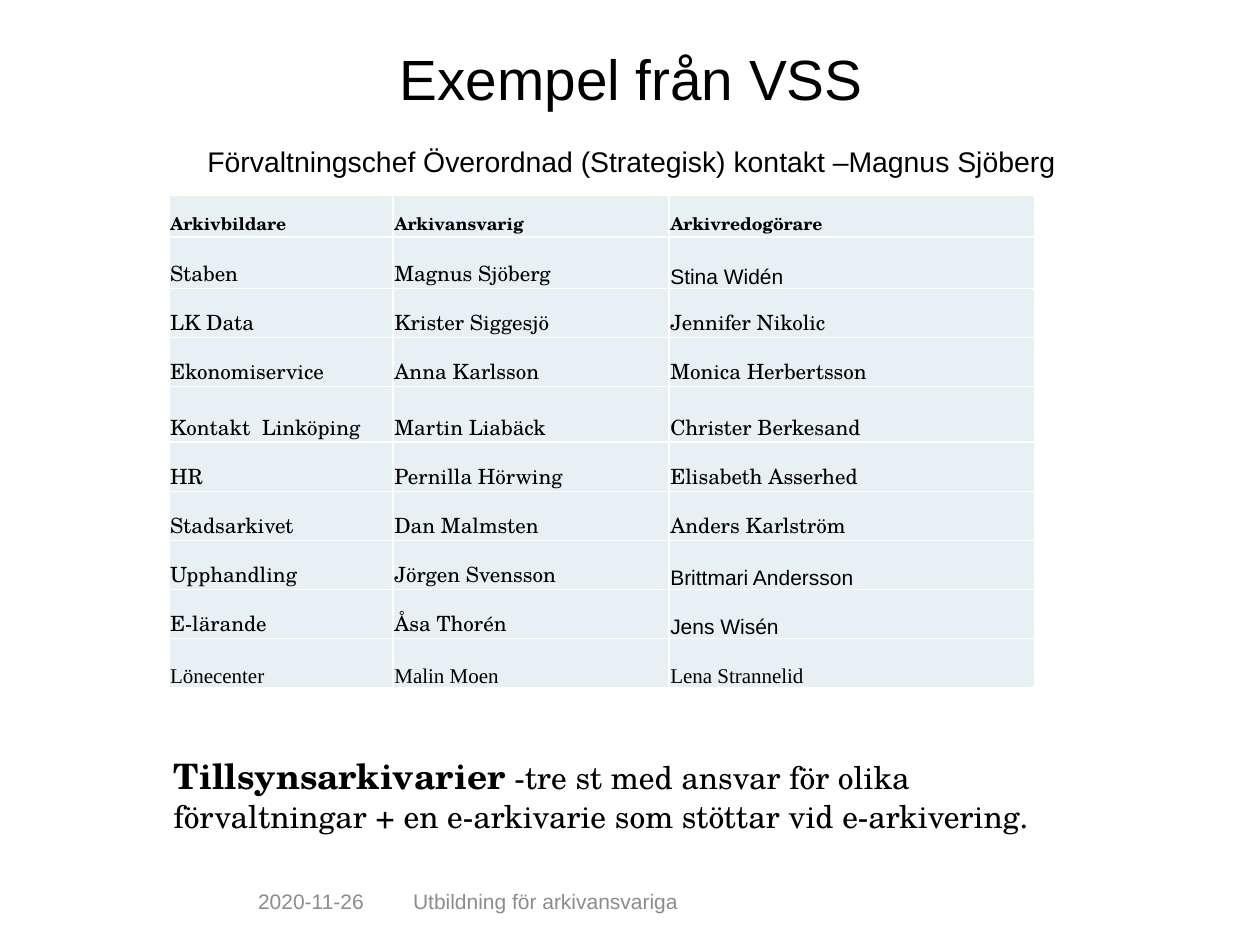
"""Build the slide listing archive roles per administration unit."""
from dataclasses import dataclass

from lxml import etree
from pptx import Presentation
from pptx import util as u
from pptx.dml.color import RGBColor
from pptx.enum import text as t
from pptx.oxml.ns import qn


@dataclass(frozen=True)
class Theme:
    ink: str = "000000"
    muted: str = "8C8C8C"
    cell: str = "E7F1F3"
    rule: str = "FFFFFF"
    sans: str = "Arial"
    serif: str = "TeX Gyre Schola"
    roman: str = "Times New Roman"
    title: float = 32.4
    subtitle: float = 16.2
    lead: float = 20
    body: float = 18
    small: float = 12
    header: float = 10


@dataclass(frozen=True)
class Span:
    text: str
    size: float
    font: str
    color: str
    bold: bool = False


@dataclass(frozen=True)
class Area:
    col: float
    row: float
    cols: float
    rows: float


THEME = Theme()
GRID_COLS, GRID_ROWS = 100, 75
SLIDE_WIDTH, SLIDE_HEIGHT = u.Inches(10), u.Inches(7.5)

TABLE_AREA = Area(13.4, 15.5, 68.7, 38.8)
COLUMN_WIDTHS = (17.8, 21.9, 29)
ROW_HEIGHTS = (3.3, 4.1, 3.9, 3.9, 4.4) + (3.9,) * 5
ROLES = (
    ("Arkivbildare", "Arkivansvarig", "Arkivredogörare"),
    ("Staben", "Magnus Sjöberg", "Stina Widén"),
    ("LK Data", "Krister Siggesjö", "Jennifer Nikolic"),
    ("Ekonomiservice", "Anna Karlsson", "Monica Herbertsson"),
    ("Kontakt  Linköping", "Martin Liabäck", "Christer Berkesand"),
    ("HR", "Pernilla Hörwing", "Elisabeth Asserhed"),
    ("Stadsarkivet", "Dan Malmsten", "Anders Karlström"),
    ("Upphandling", "Jörgen Svensson", "Brittmari Andersson"),
    ("E-lärande", "Åsa Thorén", "Jens Wisén"),
    ("Lönecenter", "Malin Moen", "Lena Strannelid"),
)
SANS_NAMES = {"Stina Widén", "Brittmari Andersson", "Jens Wisén"}


def across(cols: float) -> int:
    """Convert grid columns to a length."""
    return round(SLIDE_WIDTH * cols / GRID_COLS)


def down(rows: float) -> int:
    """Convert grid rows to a length."""
    return round(SLIDE_HEIGHT * rows / GRID_ROWS)


def place(area: Area) -> tuple[int, int, int, int]:
    """Return left, top, width and height of a grid area."""
    return across(area.col), down(area.row), across(area.cols), down(area.rows)


def write(paragraph, spans: tuple[Span, ...]) -> None:
    """Add formatted spans to a paragraph."""
    for span in spans:
        run = paragraph.add_run()
        run.text = span.text
        run.font.size = u.Pt(span.size)
        run.font.name = span.font
        run.font.bold = span.bold
        run.font.color.rgb = RGBColor.from_string(span.color)


def add_text(slide, area: Area, spans: tuple[Span, ...], anchor=t.MSO_ANCHOR.TOP):
    """Add a wrapping text box and return its frame."""
    frame = slide.shapes.add_textbox(*place(area)).text_frame
    frame.word_wrap = True
    frame.vertical_anchor = anchor
    write(frame.paragraphs[0], spans)
    return frame


def add_heading(slide) -> None:
    """Add the centred title with its subtitle."""
    title = Span("Exempel från VSS", THEME.title, THEME.sans, THEME.ink)
    contact = Span("Förvaltningschef Överordnad (Strategisk) kontakt –Magnus Sjöberg",
                   THEME.subtitle, THEME.sans, THEME.ink)
    frame = add_text(slide, Area(11.7, 2.9, 76.8, 8.5), (title,))
    frame.margin_left = frame.margin_right = frame.margin_bottom = 0
    frame.margin_top = down(0.6)
    subtitle = frame.add_paragraph()
    subtitle.space_before = u.Pt(18)
    write(subtitle, (contact,))
    for paragraph in frame.paragraphs:
        paragraph.alignment = t.PP_ALIGN.CENTER


def add_borders(cell) -> None:
    """Rule all four sides of a cell."""
    properties = cell._tc.get_or_add_tcPr()
    for position, side in enumerate(("a:lnL", "a:lnR", "a:lnT", "a:lnB")):
        line = etree.Element(qn(side), w=str(u.Pt(1)))
        fill = etree.SubElement(line, qn("a:solidFill"))
        etree.SubElement(fill, qn("a:srgbClr"), val=THEME.rule)
        properties.insert(position, line)


def role_span(name: str, row: int) -> Span:
    """Style a table entry by its row and name."""
    if row == 0:
        return Span(name, THEME.header, THEME.serif, THEME.ink, True)
    font = THEME.roman if row == len(ROLES) - 1 else THEME.serif
    if name in SANS_NAMES:
        font = THEME.sans
    return Span(name, THEME.small, font, THEME.ink)


def add_roles(slide) -> None:
    """Add the table of units and responsible people."""
    table = slide.shapes.add_table(len(ROLES), len(COLUMN_WIDTHS), *place(TABLE_AREA)).table
    table.horz_banding = False
    for column, width in zip(table.columns, COLUMN_WIDTHS):
        column.width = across(width)
    for row, height in zip(table.rows, ROW_HEIGHTS):
        row.height = down(height)
    for r, names in enumerate(ROLES):
        for c, name in enumerate(names):
            cell = table.cell(r, c)
            cell.margin_left = cell.margin_right = cell.margin_top = u.Inches(0.01)
            cell.margin_bottom = 0
            cell.vertical_anchor = t.MSO_ANCHOR.BOTTOM
            cell.fill.solid()
            cell.fill.fore_color.rgb = RGBColor.from_string(THEME.cell)
            add_borders(cell)
            write(cell.text_frame.paragraphs[0], (role_span(name, r),))


def main() -> None:
    """Build and save the slide."""
    deck = Presentation()
    deck.slide_width, deck.slide_height = SLIDE_WIDTH, SLIDE_HEIGHT
    slide = deck.slides.add_slide(deck.slide_layouts[6])
    add_heading(slide)
    add_roles(slide)
    add_text(slide, Area(12.8, 59.4, 72.1, 7.4), (
        Span("Tillsynsarkivarier", THEME.lead, THEME.serif, THEME.ink, True),
        Span(" -tre st med ansvar för olika förvaltningar + en e-arkivarie "
             "som stöttar vid e-arkivering.", THEME.body, THEME.serif, THEME.ink),
    ))
    footers = (("2020-11-26", Area(19.5, 69.5, 12.3, 4)),
               ("Utbildning för arkivansvariga", Area(31.8, 69.5, 39.5, 4)))
    for footer, area in footers:
        add_text(slide, area, (Span(footer, THEME.small, THEME.sans, THEME.muted),),
                 t.MSO_ANCHOR.MIDDLE)
    deck.save("out.pptx")


if __name__ == "__main__":
    main()
